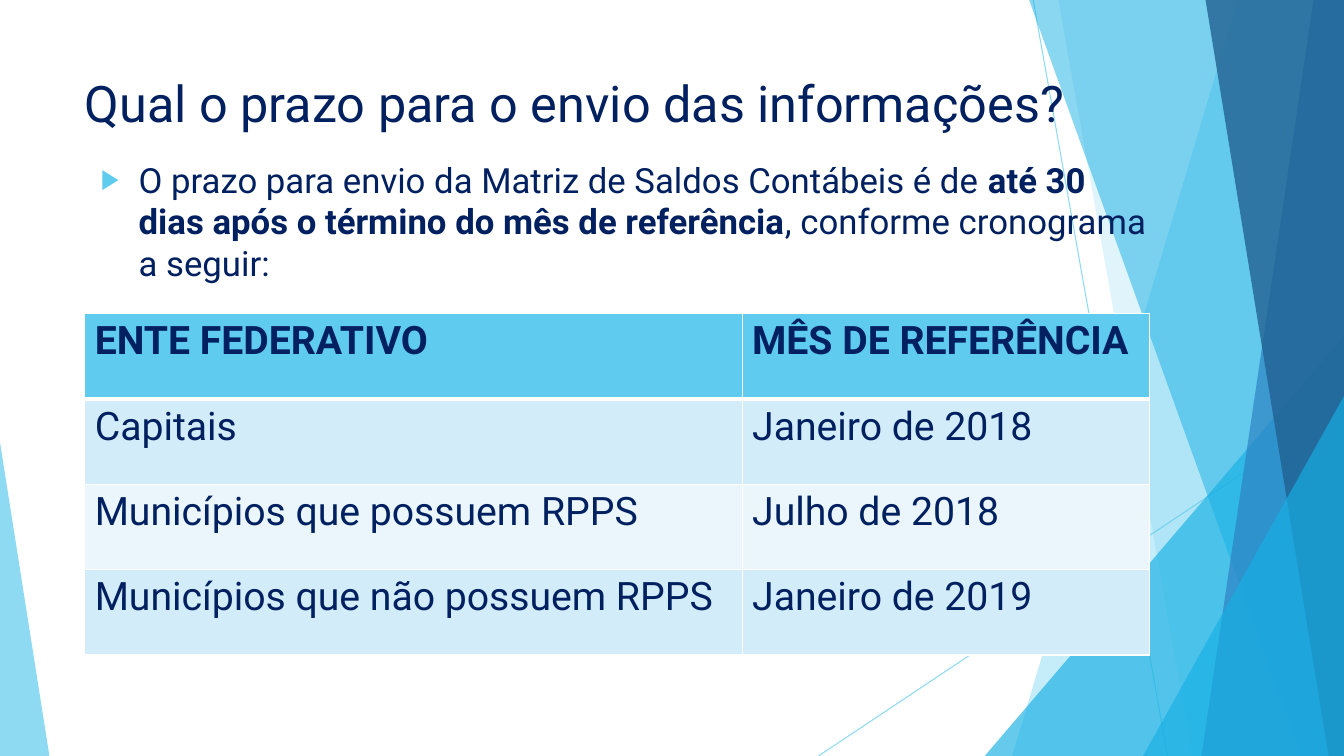
from dataclasses import dataclass

from lxml import etree
from pptx import Presentation
from pptx import util as u
from pptx.dml import color
from pptx.enum import shapes, text
from pptx.oxml import ns

WIDTH, HEIGHT = 960, 540


@dataclass(frozen=True)
class Theme:
    """Colours, font and type sizes of the slide."""

    font: str = "Roboto"
    navy: str = "002060"
    sky: str = "5FCBEF"
    cyan: str = "17B0E4"
    blue: str = "2E83C3"
    deep: str = "226292"
    white: str = "FFFFFF"
    bands: tuple = ("D2ECF9", "EAF6FC")
    title: float = 36
    body: float = 24.8
    cell: float = 28


def child(parent, tag, **attributes):
    """Append a DrawingML element to its parent."""
    return etree.SubElement(parent, ns.qn(f"a:{tag}"), attributes)


class Deck:
    """Draws styled elements on the current slide."""

    def __init__(self, theme):
        """Open a presentation with one title-and-content slide."""
        self.theme = theme
        self.file = Presentation()
        self.file.slide_width, self.file.slide_height = u.Pt(WIDTH), u.Pt(HEIGHT)
        self.slide = self.file.slides.add_slide(self.file.slide_layouts[1])
        self.shapes = self.slide.shapes

    def paint(self, fill, rgb, alpha=100):
        """Apply a solid colour with an opacity in percent."""
        fill.solid()
        fill.fore_color.rgb = color.RGBColor.from_string(rgb)
        if alpha < 100:
            tint = fill._xPr.find(".//" + ns.qn("a:srgbClr"))
            child(tint, "alpha", val=str(alpha * 1000))

    def ray(self, start, end):
        """Draw a thin translucent line."""
        line = self.shapes.add_connector(
            shapes.MSO_CONNECTOR.STRAIGHT, *map(u.Pt, start + end))
        line.line.width = u.Pt(0.75)
        self.paint(line.line.fill, self.theme.sky, 70)
        child(line._element.spPr, "effectLst")

    def finish(self, facet, rgb, alpha):
        """Give a facet its fill and remove outline and shadow."""
        facet.shadow.inherit = False
        self.paint(facet.fill, rgb, alpha)
        facet.line.fill.background()

    def facet(self, top_left, bottom_left, rgb, alpha):
        """Draw a full-height facet that reaches the right edge."""
        outline = self.shapes.build_freeform(u.Pt(top_left), 0)
        outline.add_line_segments(
            [(u.Pt(x), u.Pt(y)) for x, y in
             ((WIDTH, 0), (WIDTH, HEIGHT), (bottom_left, HEIGHT))])
        self.finish(outline.convert_to_shape(), rgb, alpha)

    def wedge(self, left, top, width, apex, rgb, alpha):
        """Draw a triangle that stands on the bottom edge."""
        wedge = self.shapes.add_shape(
            shapes.MSO_SHAPE.ISOSCELES_TRIANGLE,
            *map(u.Pt, (left, top, width, HEIGHT - top)))
        wedge.adjustments[0] = apex
        self.finish(wedge, rgb, alpha)

    def add_words(self, paragraph, words, size, bold=False):
        """Add one run in the theme's font and text colour."""
        run = paragraph.add_run()
        run.text = words
        run.font.name, run.font.size, run.font.bold = self.theme.font, u.Pt(size), bold
        run.font.color.rgb = color.RGBColor.from_string(self.theme.navy)

    def place(self, holder, left, top, width, height):
        """Move a placeholder to the front and return its first paragraph."""
        holder.left, holder.top, holder.width, holder.height = map(
            u.Pt, (left, top, width, height))
        self.shapes._spTree.append(holder._element)
        frame = holder.text_frame
        frame.word_wrap = True
        frame.auto_size = text.MSO_AUTO_SIZE.NONE
        frame.vertical_anchor = text.MSO_ANCHOR.TOP
        paragraph = frame.paragraphs[0]
        paragraph.alignment = text.PP_ALIGN.LEFT
        return paragraph

    def title(self, words, *box):
        """Fill the title placeholder."""
        self.add_words(self.place(self.shapes.title, *box), words, self.theme.title)

    def bullet(self, runs, *box):
        """Fill the body placeholder with one bulleted paragraph."""
        paragraph = self.place(self.slide.placeholders[1], *box)
        paragraph.space_before = u.Pt(10)
        props = paragraph._p.get_or_add_pPr()
        props.set("marL", str(u.Pt(27)))
        props.set("indent", str(u.Pt(-27)))
        child(child(props, "buClr"), "srgbClr", val=self.theme.sky)
        child(props, "buSzPct", val="80000")
        child(props, "buChar", char="▶")
        for words, bold in runs:
            self.add_words(paragraph, words, self.theme.body, bold)

    def border(self, cell, bottom):
        """Draw white borders around a cell."""
        props = cell._tc.get_or_add_tcPr()
        for side, width in zip("LRTB", (1, 1, 1, bottom)):
            edge = child(props, f"ln{side}", w=str(u.Pt(width)))
            child(child(edge, "solidFill"), "srgbClr", val=self.theme.white)

    def table(self, rows, left, top, widths, row_height):
        """Draw a banded table with a header row."""
        grid = self.shapes.add_table(
            len(rows), len(widths),
            *map(u.Pt, (left, top, sum(widths), row_height * len(rows)))).table
        for column, width in zip(grid.columns, widths):
            column.width = u.Pt(width)
        for r, row in enumerate(rows):
            header = r == 0
            fill = self.theme.sky if header else self.theme.bands[(r - 1) % 2]
            for c, words in enumerate(row):
                cell = grid.cell(r, c)
                self.border(cell, 3 if header else 1)
                self.paint(cell.fill, fill)
                self.add_words(cell.text_frame.paragraphs[0], words, self.theme.cell, header)


def main():
    """Build the deadline slide."""
    theme = Theme()
    deck = Deck(theme)
    deck.ray((738, 0), (834, HEIGHT))
    deck.ray((WIDTH, 290), (584.6, HEIGHT))
    deck.facet(884.2, 723, theme.sky, 36)
    deck.facet(756, 851.8, theme.sky, 20)
    deck.wedge(703.4, 240, 256.6, 1, theme.cyan, 66)
    deck.facet(735.1, 929.5, theme.cyan, 50)
    deck.facet(938.2, 858.2, theme.blue, 70)
    deck.facet(861.1, 949, theme.deep, 80)
    deck.wedge(816.5, 283, 143.5, 1, theme.cyan, 66)
    deck.wedge(0, 316, 35.3, 0, theme.sky, 70)

    deck.title("Qual o prazo para o envio das informações?", 53.3, 48, 768, 104)
    deck.bullet(
        [("O prazo para envio da Matriz de Saldos Contábeis é de ", False),
         ("até 30 dias após o término do mês de referência", True),
         (", conforme cronograma a seguir:", False)],
        64.8, 109.5, 768, 104)
    deck.table(
        [("ENTE FEDERATIVO", "MÊS DE REFERÊNCIA"),
         ("Capitais", "Janeiro de 2018"),
         ("Municípios que possuem RPPS", "Julho de 2018"),
         ("Municípios que não possuem RPPS", "Janeiro de 2019")],
        60.5, 224, (469.6, 291), 61)
    deck.file.save("out.pptx")


if __name__ == "__main__":
    main()
